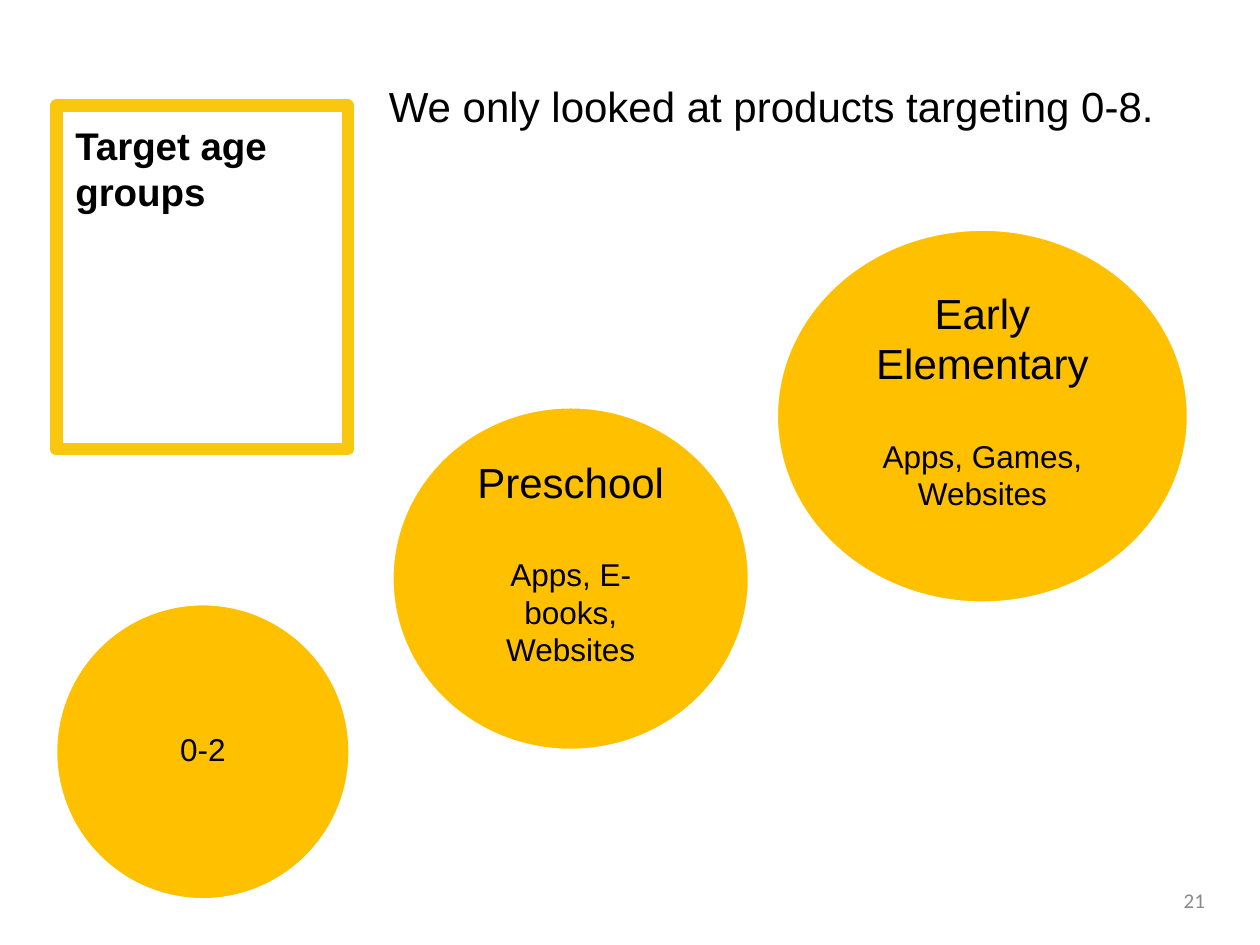
from dataclasses import dataclass
from typing import NamedTuple

from pptx import Presentation
from pptx.dml.color import RGBColor
from pptx.enum.shapes import MSO_SHAPE
from pptx.enum.text import MSO_ANCHOR, PP_ALIGN
from pptx.util import Cm, Pt

LEFT, CENTER, RIGHT = PP_ALIGN.LEFT, PP_ALIGN.CENTER, PP_ALIGN.RIGHT
TOP, MIDDLE = MSO_ANCHOR.TOP, MSO_ANCHOR.MIDDLE
OVAL, RECTANGLE = MSO_SHAPE.OVAL, MSO_SHAPE.RECTANGLE


@dataclass(frozen=True)
class Theme:
    ink: RGBColor = RGBColor(0x00, 0x00, 0x00)
    muted: RGBColor = RGBColor(0x89, 0x89, 0x89)
    paper: RGBColor = RGBColor(0xFF, 0xFF, 0xFF)
    frame: RGBColor = RGBColor(0xFA, 0xC7, 0x0F)
    circle: RGBColor = RGBColor(0xFF, 0xC0, 0x00)
    body_font: str = "Arial"
    number_font: str = "Calibri"
    heading: Pt = Pt(24)
    title: Pt = Pt(22)
    body: Pt = Pt(18)
    number: Pt = Pt(12)
    frame_line: Pt = Pt(7)
    circle_line: Pt = Pt(2)


THEME = Theme()


class Area(NamedTuple):
    left: float
    top: float
    width: float
    height: float

    def lengths(self) -> list[Cm]:
        return [Cm(value) for value in self]

    def centered(self, width: float, height: float) -> "Area":
        return Area(self.left + (self.width - width) / 2,
                    self.top + (self.height - height) / 2, width, height)


class Line(NamedTuple):
    text: str
    font: dict
    paragraph: dict


@dataclass(frozen=True)
class AgeGroup:
    area: Area
    text_width: float
    text_height: float
    lines: list[Line]
    bottom_inset: float = 0.03


def apply(target, values: dict) -> None:
    for name, value in values.items():
        setattr(target, name, value)


def add_text(shapes, area: Area, lines: list[Line], **frame_format):
    frame = shapes.add_textbox(*area.lengths()).text_frame
    apply(frame, {"word_wrap": True, **frame_format})
    for index, line in enumerate(lines):
        para = frame.add_paragraph() if index else frame.paragraphs[0]
        apply(para, line.paragraph)
        span = para.add_run()
        span.text = line.text
        font = {"name": THEME.body_font, "color": THEME.ink, **line.font}
        span.font.color.rgb = font.pop("color")
        apply(span.font, font)
    return frame


def add_outline(shapes, kind, area: Area, color: RGBColor, width: Pt):
    box = shapes.add_shape(kind, *area.lengths())
    box.shadow.inherit = False
    box.fill.background()
    box.line.color.rgb = color
    box.line.width = width
    return box


def add_age_group(page, group: AgeGroup) -> None:
    shapes = page.shapes.add_group_shape().shapes
    circle = add_outline(shapes, OVAL, group.area, THEME.paper, THEME.circle_line)
    circle.fill.solid()
    circle.fill.fore_color.rgb = THEME.circle
    inset = Cm(0.03)
    add_text(shapes, group.area.centered(group.text_width, group.text_height),
             group.lines, vertical_anchor=MIDDLE, margin_left=inset,
             margin_right=inset, margin_top=inset,
             margin_bottom=Cm(group.bottom_inset))


def stage_lines(name: str, products: str) -> list[Line]:
    return [
        Line(name, {"size": THEME.heading}, {"alignment": CENTER}),
        Line(products, {"size": THEME.body},
             {"alignment": CENTER, "space_before": Pt(27.6)}),
    ]


AGE_GROUPS = [
    AgeGroup(Area(7.9, 8.2, 7.21, 6.93), 4.19, 4.22,
             stage_lines("Preschool", "Apps, E-books, Websites"), 0.69),
    AgeGroup(Area(15.65, 4.62, 8.31, 7.54), 5.87, 5.33,
             stage_lines("Early Elementary", "Apps, Games, Websites"), 0.69),
    AgeGroup(Area(1.12, 12.17, 5.94, 5.97), 4.19, 4.22,
             [Line("0-2", {"size": THEME.body},
                   {"alignment": CENTER, "line_spacing": 0.9})]),
]


def main() -> None:
    deck = Presentation()
    apply(deck, {"slide_width": Cm(25.4), "slide_height": Cm(19.05)})
    page = deck.slides.add_slide(deck.slide_layouts[6])
    add_outline(page.shapes, RECTANGLE, Area(1.14, 2.13, 5.87, 6.93),
                THEME.frame, THEME.frame_line)
    add_text(page.shapes, Area(1.27, 2.34, 5.72, 2.13),
             [Line("Target age groups", {"size": THEME.title, "bold": True},
                   {"alignment": LEFT})], vertical_anchor=TOP)
    add_text(page.shapes, Area(18.62, 17.63, 5.92, 1.02),
             [Line("21", {"size": THEME.number, "name": THEME.number_font,
                          "color": THEME.muted}, {"alignment": RIGHT})],
             vertical_anchor=MIDDLE)
    add_text(page.shapes, Area(7.59, 1.5, 16.54, 2.97),
             [Line("We only looked at products targeting 0-8.",
                   {"size": THEME.heading}, {"alignment": LEFT})],
             vertical_anchor=TOP)
    for group in AGE_GROUPS:
        add_age_group(page, group)
    deck.save("out.pptx")


if __name__ == "__main__":
    main()
